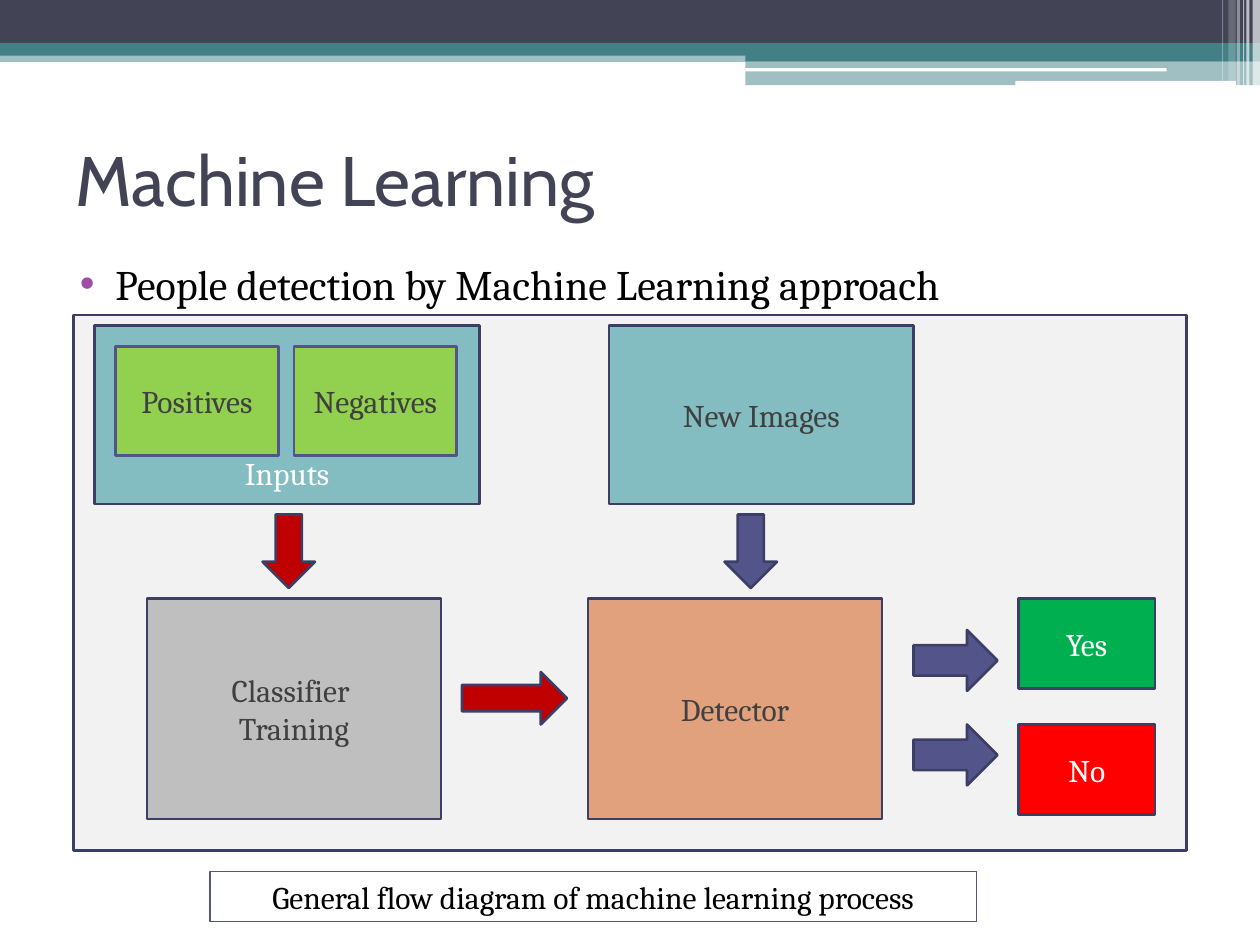
from lxml import etree
from pptx import Presentation
from pptx.dml.color import RGBColor
from pptx.enum.shapes import MSO_SHAPE
from pptx.enum.text import MSO_ANCHOR, MSO_AUTO_SIZE, PP_ALIGN
from pptx.oxml.ns import qn
from pptx.util import Pt

RECTANGLE = MSO_SHAPE.RECTANGLE
ROUNDED = MSO_SHAPE.ROUNDED_RECTANGLE
PROCESS = MSO_SHAPE.FLOWCHART_PROCESS
RIGHT_ARROW = MSO_SHAPE.RIGHT_ARROW
LEFT, CENTER = PP_ALIGN.LEFT, PP_ALIGN.CENTER
TOP, MIDDLE, BOTTOM = MSO_ANCHOR.TOP, MSO_ANCHOR.MIDDLE, MSO_ANCHOR.BOTTOM
FIXED, GROW = MSO_AUTO_SIZE.NONE, MSO_AUTO_SIZE.SHAPE_TO_FIT_TEXT

EMU_PER_PX = 7620  # 120 px to the inch
COLORS = {
    "white": "FFFFFF", "black": "000000", "text": "404040",
    "navy": "424456", "teal": "438086", "panel": "F2F2F2",
    "outline": "3D3E66", "indigo": "53548A", "bullet": "A04DA3",
    "input": "83BCC1", "sample": "92D050", "training": "BFBFBF",
    "detector": "E1A17C", "dark red": "C00000",
    "yes": "00B050", "no": "FF0000",
}


def px(length):
    return length * EMU_PER_PX


def rgb(name):
    return RGBColor.from_string(COLORS[name])


def write_text(frame, text, font="Cambria", size=18, color="text",
               align=CENTER, anchor=MIDDLE, fit=FIXED):
    """Write one paragraph for each line of text."""
    frame.word_wrap = True
    frame.auto_size = fit
    frame.vertical_anchor = anchor
    for index, line in enumerate(text.split("\n")):
        paragraph = frame.add_paragraph() if index else frame.paragraphs[0]
        paragraph.alignment = align
        run = paragraph.add_run()
        run.text = line
        run.font.name = font
        run.font.size = Pt(size)
        run.font.color.rgb = rgb(color)


class FlowSlide:
    def __init__(self, slide, outline="outline", line_width=1.5):
        self.slide = slide
        self.outline = outline
        self.line_width = line_width

    def shape(self, kind, box, fill=None, line=None, width=None):
        shape = self.slide.shapes.add_shape(kind, *map(px, box))
        shape.shadow.inherit = False
        if fill:
            shape.fill.solid()
            shape.fill.fore_color.rgb = rgb(fill)
        else:
            shape.fill.background()
        if line:
            shape.line.color.rgb = rgb(line)
            shape.line.width = Pt(width or self.line_width)
        else:
            shape.line.fill.background()
        return shape

    def band(self, box, fill, opacity=100, kind=RECTANGLE):
        shape = self.shape(kind, box, fill)
        if opacity < 100:
            color = shape.element.spPr.find(qn("a:solidFill"))[0]
            etree.SubElement(color, qn("a:alpha"), val=str(opacity * 1000))

    def box(self, box, text, fill, line=None, **text_format):
        shape = self.shape(RECTANGLE, box, fill, line or self.outline)
        write_text(shape.text_frame, text, **text_format)
        return shape

    def arrow(self, box, fill, rotation=0):
        self.shape(RIGHT_ARROW, box, fill, self.outline).rotation = rotation

    def placeholder(self, index, box, text, **text_format):
        shape = self.slide.placeholders[index]
        shape.left, shape.top, shape.width, shape.height = map(px, box)
        shape.element.getparent().append(shape.element)  # bring to front
        write_text(shape.text_frame, text, align=LEFT, **text_format)
        return shape

    def bullet_list(self, box, text, **text_format):
        shape = self.placeholder(1, box, text, anchor=TOP, **text_format)
        for paragraph in shape.text_frame.paragraphs:
            paragraph.space_before = Pt(3)
            properties = paragraph._p.get_or_add_pPr()
            properties.set("marL", str(px(48)))
            properties.set("indent", str(px(-34)))
            color = etree.SubElement(properties, qn("a:buClr"))
            etree.SubElement(color, qn("a:srgbClr"), val=COLORS["bullet"])
            etree.SubElement(properties, qn("a:buChar"), char="•")


def main():
    presentation = Presentation()
    presentation.slide_width, presentation.slide_height = px(1200), px(900)
    slide = presentation.slides.add_slide(presentation.slide_layouts[1])
    flow = FlowSlide(slide)

    # Header bands
    flow.band((0, 48, 1200, 11), "teal", 50)
    flow.band((0, 0, 1200, 41), "navy")
    flow.band((0, 41, 1200, 12), "teal")
    flow.band((710, 47, 490, 11), "teal")
    flow.band((710, 58, 490, 23), "teal", 50)
    flow.band((709, 65, 402, 3), "white", kind=ROUNDED)
    flow.band((967, 77, 210, 5), "white", kind=ROUNDED)

    # Light stripes at the right end of the header
    for left, width, height, opacity in (
            (1193, 7, 82, 65), (1187, 3, 82, 65), (1184, 1, 82, 60),
            (1178, 3, 82, 40), (1170, 7, 77, 20), (1164, 1, 77, 30)):
        flow.band((left, 0, width, height), "white", opacity)

    # Panel, title and list
    flow.shape(PROCESS, (70, 300, 1060, 510), "panel", flow.outline)
    flow.placeholder(0, (60, 100, 1080, 140), "Machine Learning",
                     font="Cabin", size=40, color="navy")
    flow.bullet_list((50, 240, 1080, 568),
                     "People detection by Machine Learning approach",
                     size=24, color="black")

    # Inputs
    inputs = flow.box((90, 310, 367, 170), "Inputs", "input",
                      color="white", anchor=BOTTOM)
    inputs.text_frame.margin_bottom = px(12)
    for left, label in ((110, "Positives"), (280, "Negatives")):
        flow.box((left, 330, 155, 104), label, "sample", "indigo")
    flow.box((580, 310, 290, 170), "New Images", "input")

    # Training and detection
    flow.box((140, 570, 280, 210), "Classifier \nTraining", "training")
    flow.box((560, 570, 280, 210), "Detector", "detector")
    flow.arrow((440, 640, 100, 50), "dark red")
    for left, fill in ((240, "dark red"), (680, "indigo")):
        flow.arrow((left, 500, 70, 50), fill, rotation=90)

    # Results
    for arrow_top, top, label, fill in ((600, 570, "Yes", "yes"),
                                        (690, 690, "No", "no")):
        flow.arrow((870, arrow_top, 80, 58), "indigo")
        flow.box((970, top, 130, 86), label, fill, color="white")

    # Caption
    caption = flow.shape(RECTANGLE, (200, 830, 730, 48), None, "indigo", 0.75)
    write_text(caption.text_frame,
               "General flow diagram of machine learning process",
               color="black", anchor=TOP, fit=GROW)

    presentation.save("out.pptx")


if __name__ == "__main__":
    main()
